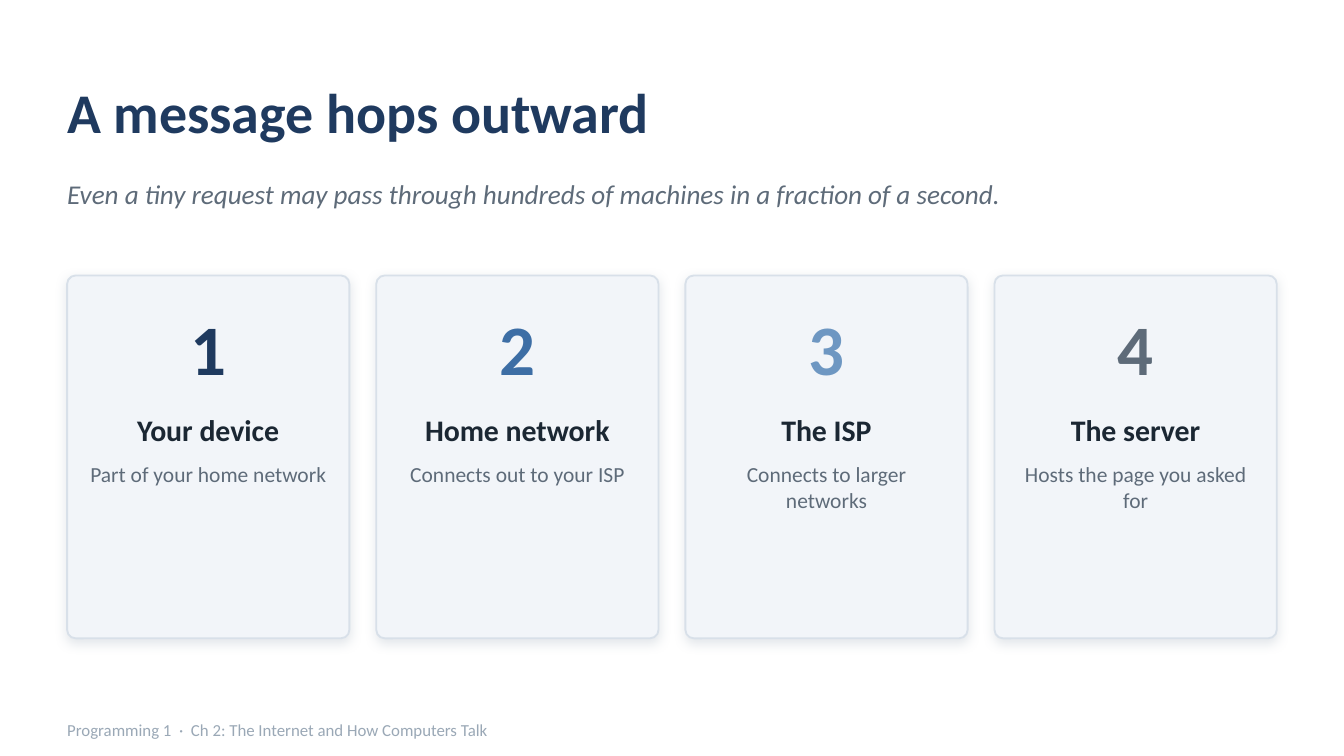
from dataclasses import dataclass

from lxml.etree import SubElement
from pptx import Presentation
from pptx.dml.color import RGBColor
from pptx.enum.shapes import MSO_SHAPE as Shape
from pptx.enum.text import MSO_ANCHOR as Anchor, PP_ALIGN as Align
from pptx.oxml.ns import qn
from pptx.util import Inches, Pt

TITLE = "A message hops outward"
SUBTITLE = "Even a tiny request may pass through hundreds of machines in a fraction of a second."
FOOTER = "Programming 1  ·  Ch 2: The Internet and How Computers Talk"
HOPS = [
    ("Your device", "Part of your home network", "1F3A5F"),
    ("Home network", "Connects out to your ISP", "3D6EA5"),
    ("The ISP", "Connects to larger networks", "6E97C2"),
    ("The server", "Hosts the page you asked for", "5E6B79"),
]


@dataclass(frozen=True)
class Theme:
    font: str = "Calibri"
    navy: str = "1F3A5F"
    ink: str = "1B2733"
    muted: str = "5E6B79"
    faint: str = "9AA8B6"
    card: str = "F2F5F9"
    border: str = "D8E0E9"
    title_size: float = 30
    subtitle_size: float = 14.5
    number_size: float = 38
    heading_size: float = 16
    detail_size: float = 11.5
    footer_size: float = 9


THEME = Theme()
WIDTH, MARGIN = 10, 0.5
HEIGHT = WIDTH * 9 / 16
CONTENT_WIDTH = WIDTH - 2 * MARGIN
GAP = 0.2
CARD_TOP, CARD_HEIGHT = 2.05, 2.7
CARD_WIDTH = (CONTENT_WIDTH - GAP * (len(HOPS) - 1)) / len(HOPS)


def add_text(page, text, area, size, color, bold=False, italic=False,
             align=Align.LEFT, anchor=Anchor.MIDDLE):
    box = page.shapes.add_textbox(*map(Inches, area))
    frame = box.text_frame
    frame.word_wrap = True
    frame.vertical_anchor = anchor
    frame.margin_left = frame.margin_right = frame.margin_top = frame.margin_bottom = 0
    frame.text = text
    para = frame.paragraphs[0]
    para.alignment = align
    font = para.runs[0].font
    font.name, font.size, font.bold, font.italic = THEME.font, Pt(size), bold, italic
    font.color.rgb = RGBColor.from_string(color)


def add_soft_shadow(shape):
    shape.shadow.inherit = False
    effects = shape.element.spPr.find(qn("a:effectLst"))
    shadow = SubElement(effects, qn("a:outerShdw"), blurRad=str(Pt(6)), dist=str(Pt(2)),
                        dir=str(90 * 60000), algn="bl", rotWithShape="0")
    color = SubElement(shadow, qn("a:srgbClr"), val=THEME.faint)
    SubElement(color, qn("a:alpha"), val="28000")


def add_card(page, index, heading, detail, accent):
    left = MARGIN + index * (CARD_WIDTH + GAP)

    def row(offset, height, inset=0):
        """Area inside the card, below its top edge and inset from both sides."""
        return left + inset, CARD_TOP + offset, CARD_WIDTH - 2 * inset, height

    card = page.shapes.add_shape(Shape.ROUNDED_RECTANGLE, *map(Inches, row(0, CARD_HEIGHT)))
    card.adjustments[0] = 0.03
    card.fill.solid()
    card.fill.fore_color.rgb = RGBColor.from_string(THEME.card)
    card.line.color.rgb = RGBColor.from_string(THEME.border)
    card.line.width = Pt(1)
    add_soft_shadow(card)

    add_text(page, str(index + 1), row(0.18, 0.7), THEME.number_size, accent,
             bold=True, align=Align.CENTER)
    add_text(page, heading, row(0.95, 0.4, 0.1), THEME.heading_size, THEME.ink,
             bold=True, align=Align.CENTER)
    add_text(page, detail, row(1.38, 1.1, 0.15), THEME.detail_size, THEME.muted,
             align=Align.CENTER, anchor=Anchor.TOP)


def main():
    deck = Presentation()
    deck.slide_width, deck.slide_height = Inches(WIDTH), Inches(HEIGHT)
    page = deck.slides.add_slide(deck.slide_layouts[6])
    add_text(page, TITLE, (MARGIN, 0.4, CONTENT_WIDTH, 0.85), THEME.title_size,
             THEME.navy, bold=True)
    add_text(page, SUBTITLE, (MARGIN, 1.24, CONTENT_WIDTH, 0.4), THEME.subtitle_size,
             THEME.muted, italic=True)
    for index, hop in enumerate(HOPS):
        add_card(page, index, *hop)
    add_text(page, FOOTER, (MARGIN, 5.3, 8, 0.26), THEME.footer_size, THEME.faint)
    deck.save("out.pptx")


if __name__ == "__main__":
    main()
